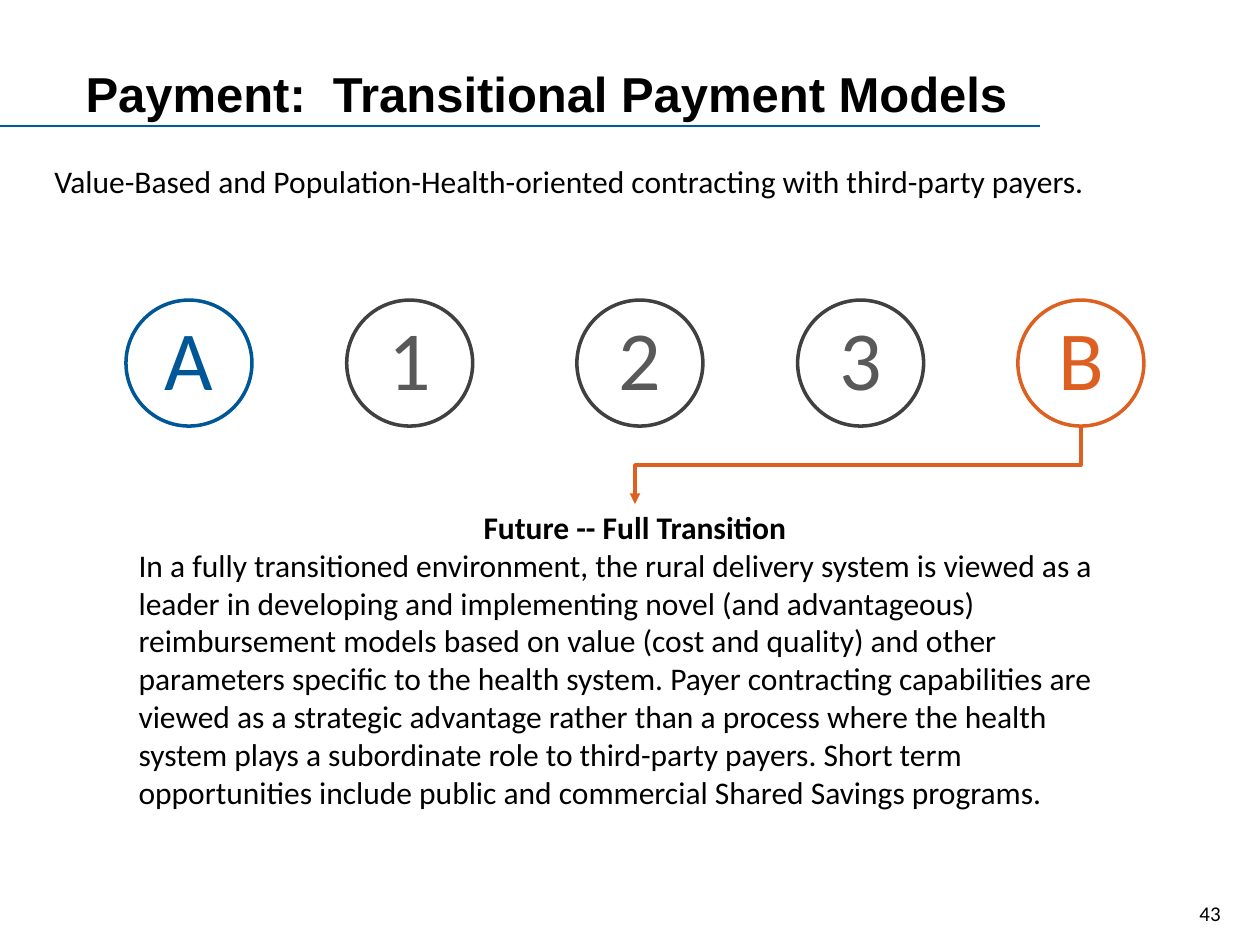
from dataclasses import dataclass

from lxml.etree import SubElement
from pptx import Presentation
from pptx.dml.color import RGBColor
from pptx.enum.shapes import MSO_CONNECTOR as CONN, MSO_SHAPE as SHAPE
from pptx.enum.text import MSO_ANCHOR as ANCHOR, MSO_AUTO_SIZE as AUTO, PP_ALIGN as ALIGN
from pptx.oxml.ns import qn
from pptx.util import Cm, Pt

COLORS = {
    "black": "000000",
    "white": "FFFFFF",
    "rule": "005B99",
    "blue": "005797",
    "ring": "404040",
    "digit": "595959",
    "orange": "DE6021",
}
DIAMETER = 2.54
CIRCLE_TOP = 6.05


@dataclass
class Stage:
    label: str
    left: float
    line: str
    text: str


STAGES = [
    Stage("A", 2.54, "blue", "blue"),
    Stage("1", 6.99, "ring", "digit"),
    Stage("2", 11.63, "ring", "digit"),
    Stage("3", 16.08, "ring", "digit"),
    Stage("B", 20.52, "orange", "orange"),
]
LEAD = "Value-Based and Population-Health-oriented contracting with third-party payers."
HEADING = "Future -- Full Transition"
DETAIL = (
    "In a fully transitioned environment, the rural delivery system is viewed as a leader in "
    "developing and implementing novel (and advantageous) reimbursement models based on value "
    "(cost and quality) and other parameters specific to the health system. Payer contracting "
    "capabilities are viewed as a strategic advantage rather than a process where the health "
    "system plays a subordinate role to third-party payers. Short term opportunities include "
    "public and commercial Shared Savings programs."
)


def rgb(name: str) -> RGBColor:
    return RGBColor.from_string(COLORS[name])


def place(sp, left: float, top: float, width: float, height: float) -> None:
    sp.left, sp.top, sp.width, sp.height = Cm(left), Cm(top), Cm(width), Cm(height)


def format_runs(p, size: float, color: str = "black", font: str = "Calibri", bold: bool = False) -> None:
    for r in p.runs:
        r.font.name, r.font.size, r.font.bold = font, Pt(size), bold
        r.font.color.rgb = rgb(color)


def set_frame(sp, text: str, anchor=ANCHOR.TOP, top: float = 0.13, bottom: float = 0.13):
    tf = sp.text_frame
    tf.text = text
    tf.word_wrap, tf.auto_size = True, AUTO.NONE
    tf.vertical_anchor = anchor
    tf.margin_top, tf.margin_bottom = Cm(top), Cm(bottom)
    return tf


def fill_body(sp, text: str) -> list:
    tf = set_frame(sp, text, top=0.08)
    for p in tf.paragraphs:
        pPr = p._p.get_or_add_pPr()
        pPr.set("marL", "0")
        pPr.set("indent", "0")
        SubElement(pPr, qn("a:buNone"))
        p.alignment = ALIGN.LEFT
        p.space_before, p.line_spacing = Pt(0), 1.0
        format_runs(p, 18)
    return list(tf.paragraphs)


def add_stage(s, stage: Stage) -> None:
    sp = s.shapes.add_shape(SHAPE.OVAL, Cm(stage.left), Cm(CIRCLE_TOP), Cm(DIAMETER), Cm(DIAMETER))
    sp.shadow.inherit = False
    sp.fill.solid()
    sp.fill.fore_color.rgb = rgb("white")
    sp.line.color.rgb, sp.line.width = rgb(stage.line), Pt(2)
    p = set_frame(sp, stage.label, ANCHOR.BOTTOM, bottom=0).paragraphs[0]
    p.alignment = ALIGN.CENTER
    format_runs(p, 48, stage.text)


def add_line(s, kind, x1: float, y1: float, x2: float, y2: float, color: str, width: float):
    line = s.shapes.add_connector(kind, Cm(x1), Cm(y1), Cm(x2), Cm(y2))
    line.line.color.rgb, line.line.width = rgb(color), Pt(width)
    SubElement(line._element.spPr, qn("a:effectLst"))
    return line


def add_drop_arrow(s, x1: float, y1: float, x2: float, y2: float) -> None:
    cx, cy = (x1 + x2) / 2, (y1 + y2) / 2
    dx, dy = (x1 - x2) / 2, (y2 - y1) / 2
    arrow = add_line(s, CONN.ELBOW, cx - dy, cy - dx, cx + dy, cy + dx, "orange", 2)
    arrow.rotation = 90
    arrow._element.spPr.find(qn("a:xfrm")).set("rot", "5400000")
    SubElement(arrow.line._get_or_add_ln(), qn("a:tailEnd"), type="triangle")


def main() -> None:
    """Build the transitional payment models slide."""
    prs = Presentation()
    prs.slide_width, prs.slide_height = Cm(25.4), Cm(19.05)
    s = prs.slides.add_slide(prs.slide_layouts[3])
    title, lead, detail = list(s.placeholders)[:3]

    place(title, 1.47, 1.04, 22.02, 1.27)
    p = set_frame(title, "Payment:  Transitional Payment Models", top=0.23).paragraphs[0]
    p.alignment = ALIGN.LEFT
    format_runs(p, 28, font="Arial", bold=True)
    add_line(s, CONN.STRAIGHT, 0, 2.54, 20.96, 2.54, "rule", 0.75)

    place(lead, 0.84, 3.18, 23.29, 2.11)
    fill_body(lead, LEAD)
    place(detail, 2.54, 10.16, 20.52, 7.19)
    heading = fill_body(detail, f"{HEADING}\n{DETAIL}")[0]
    heading.alignment = ALIGN.CENTER
    format_runs(heading, 18, bold=True)

    for stage in STAGES:
        add_stage(s, stage)
    add_drop_arrow(s, STAGES[-1].left + DIAMETER / 2, CIRCLE_TOP + DIAMETER, 12.8, 10.16)

    number = s.shapes.add_textbox(Cm(23.93), Cm(18.03), Cm(1.47), Cm(1.02))
    format_runs(set_frame(number, "43").paragraphs[0], 12)
    prs.save("out.pptx")


if __name__ == "__main__":
    main()
